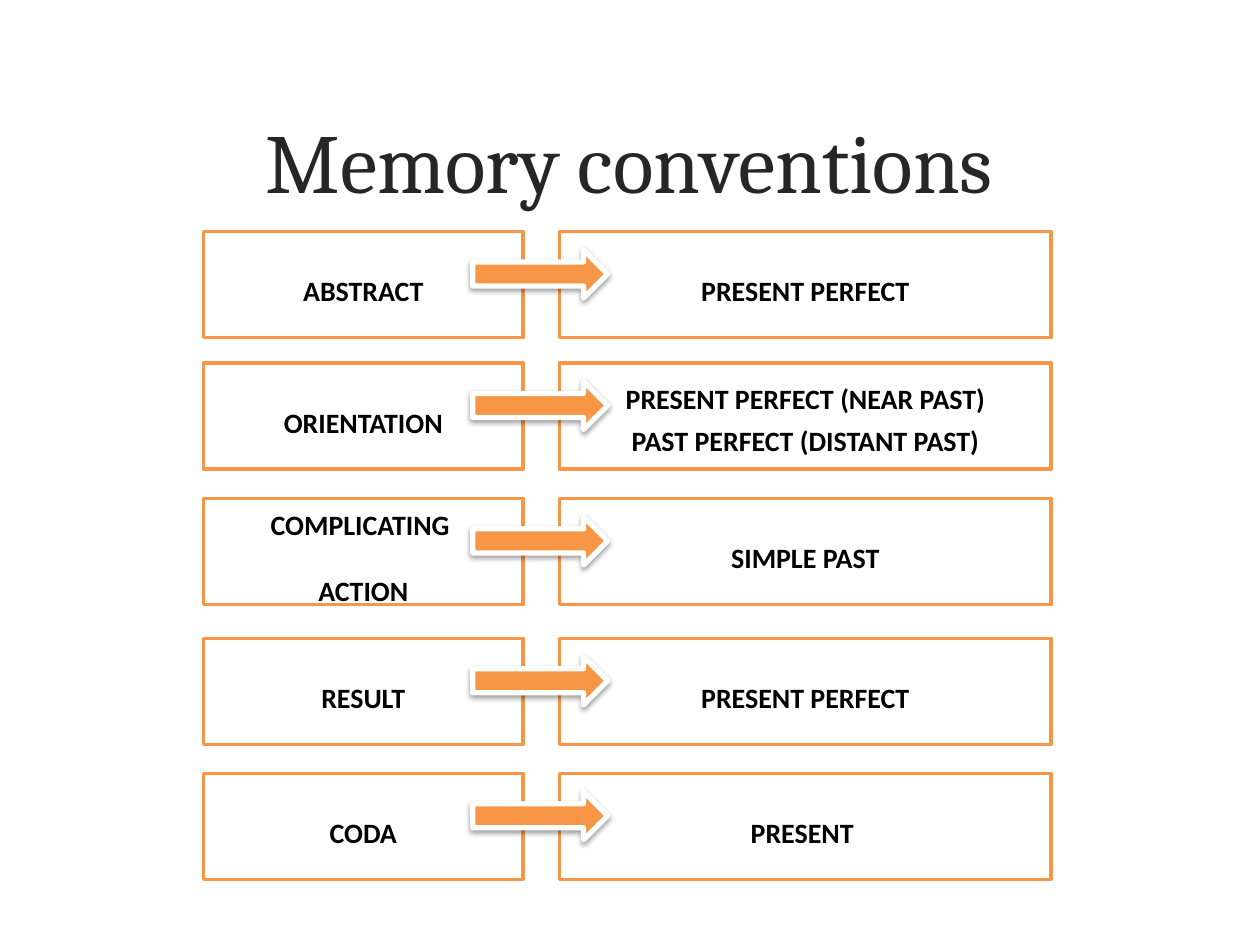
from lxml import etree
from pptx import Presentation
from pptx.dml.color import RGBColor
from pptx.enum.shapes import MSO_SHAPE
from pptx.enum.text import MSO_ANCHOR, PP_ALIGN
from pptx.oxml.ns import qn
from pptx.util import Cm, Pt

RECTANGLE, RIGHT_ARROW = MSO_SHAPE.RECTANGLE, MSO_SHAPE.RIGHT_ARROW
CENTER, MIDDLE = PP_ALIGN.CENTER, MSO_ANCHOR.MIDDLE

COLORS = {"title": "262626", "text": "000000", "accent": "F79646", "paper": "FFFFFF"}
TITLE_FONT = {"name": "Cambria", "size": Pt(48)}
LABEL_FONT = {"name": "Calibri", "size": Pt(20), "bold": True}
LOOSE = {"alignment": CENTER, "line_spacing": 1.15, "space_after": Pt(10)}
TIGHT = {"alignment": CENTER}
SHADOW = {"blurRad": Pt(3.15), "dist": Pt(1.57), "dir": 5400000, "rotWithShape": 0}

STAGES = [
    (4.67, ["abstract"], ["present perfect"], LOOSE),
    (7.32, ["orientation"], ["present perfect (near past)", "past perfect (distant past)"], TIGHT),
    (10.05, ["complicating ", "action"], ["simple past"], LOOSE),
    (12.87, ["result"], ["present perfect"], LOOSE),
    (15.59, ["coda"], ["present "], LOOSE),
]


def color(key):
    """Return the named colour."""
    return RGBColor.from_string(COLORS[key])


def apply(target, values):
    """Set each format value on the target."""
    for attribute, value in values.items():
        setattr(target, attribute, value)


class ConventionSlide:
    """Holds the slide and draws its elements in one style."""

    def __init__(self, slide):
        self.slide = slide

    def title(self, wording, box):
        """Fill and place the title."""
        heading = self.slide.shapes.title
        apply(heading, dict(zip(("left", "top", "width", "height"), map(Cm, box))))
        heading.text_frame.text = wording
        heading.text_frame.vertical_anchor = MIDDLE
        paragraph = heading.text_frame.paragraphs[0]
        paragraph.alignment = CENTER
        font = paragraph.runs[0].font
        apply(font, TITLE_FONT)
        font.color.rgb = color("title")

    def outline(self, preset, box, fill, line, width):
        """Add a filled, outlined shape without shadow."""
        shape = self.slide.shapes.add_shape(preset, *map(Cm, box))
        shape.shadow.inherit = False
        shape.fill.solid()
        shape.fill.fore_color.rgb = color(fill)
        shape.line.color.rgb = color(line)
        shape.line.width = Pt(width)
        return shape

    def label(self, lines, box, layout):
        """Add a box of small-cap lines."""
        frame = self.outline(RECTANGLE, box, "paper", "accent", 2).text_frame
        frame.word_wrap = True
        frame.vertical_anchor = MIDDLE
        for index, line in enumerate(lines):
            paragraph = frame.add_paragraph() if index else frame.paragraphs[0]
            apply(paragraph, layout)
            run = paragraph.add_run()
            run.text = line
            apply(run.font, LABEL_FONT)
            run.font.color.rgb = color("text")
            run._r.get_or_add_rPr().set("cap", "small")

    def arrow(self, box):
        """Add a right arrow with a soft shadow."""
        pointer = self.outline(RIGHT_ARROW, box, "accent", "paper", 3)
        effects = pointer._element.spPr.find(qn("a:effectLst"))
        shadow = etree.SubElement(effects, qn("a:outerShdw"))
        for attribute, value in SHADOW.items():
            shadow.set(attribute, str(int(value)))
        tint = etree.SubElement(shadow, qn("a:srgbClr"), val=COLORS["text"])
        etree.SubElement(tint, qn("a:alpha"), val="38000")


def main():
    """Build and save the slide."""
    deck = Presentation()
    deck.slide_width, deck.slide_height = Cm(25.4), Cm(19.05)
    page = ConventionSlide(deck.slides.add_slide(deck.slide_layouts[5]))
    page.title("Memory conventions", (1.52, 1.22, 22.33, 4.01))
    for top, stage, tense, tense_layout in STAGES:
        page.label(stage, (4.1, top, 6.45, 2.14), LOOSE)
        page.label(tense, (11.28, top, 9.91, 2.14), tense_layout)
        page.arrow((9.53, top + 0.37, 2.72, 0.97))
    deck.save("out.pptx")


if __name__ == "__main__":
    main()
